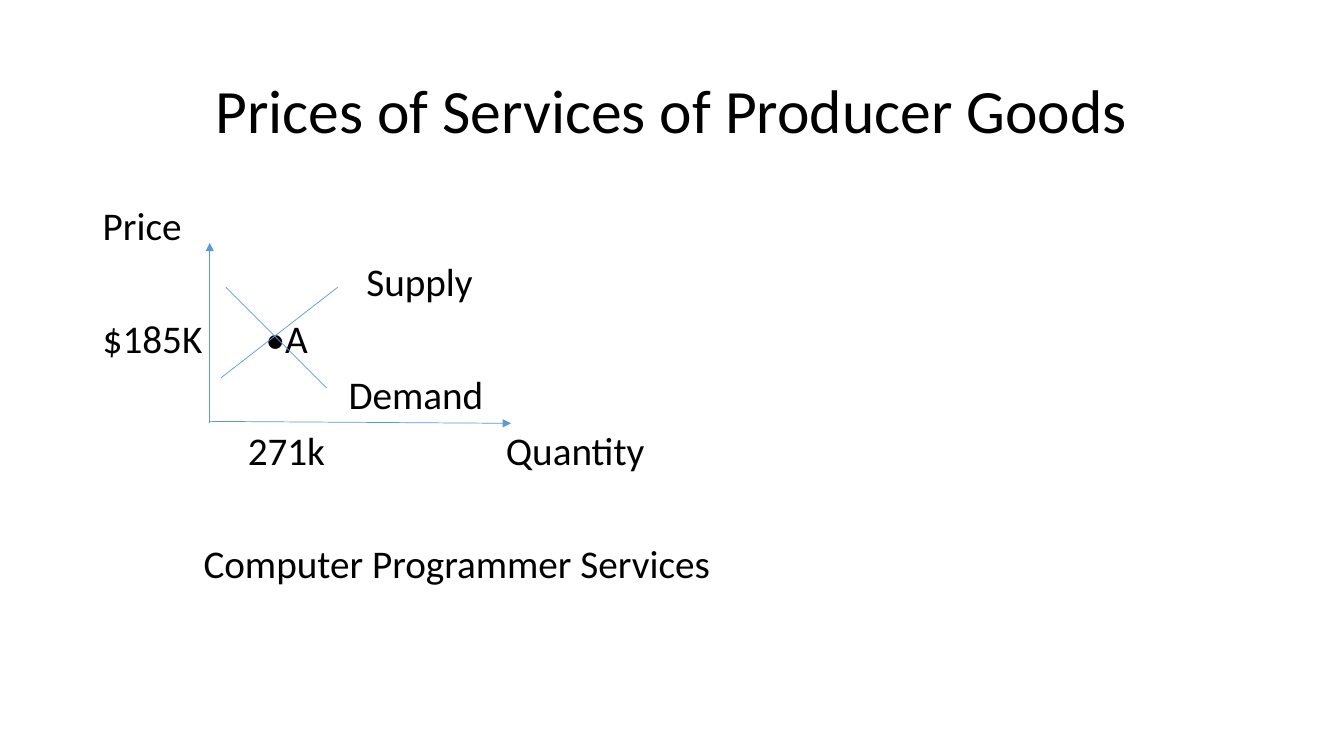
"""Build a slide showing supply and demand for computer programmer services."""
from dataclasses import dataclass

import pptx
import pptx.dml.color
import pptx.enum.shapes
import pptx.enum.text
import pptx.oxml
import pptx.oxml.ns
import pptx.presentation
import pptx.slide
import pptx.util
from lxml import etree

Pt = pptx.util.Pt
RGBColor = pptx.dml.color.RGBColor
PP_ALIGN = pptx.enum.text.PP_ALIGN
MSO_ANCHOR = pptx.enum.text.MSO_ANCHOR


@dataclass(frozen=True)
class Theme:
    font: str = "Calibri"
    text_color: RGBColor = RGBColor(0x00, 0x00, 0x00)
    line_color: RGBColor = RGBColor(0x5B, 0x9B, 0xD5)
    background: RGBColor = RGBColor(0xFF, 0xFF, 0xFF)
    title_size: float = 44
    label_size: float = 28
    line_width: float = 0.5
    line_spacing: float = 0.9


@dataclass(frozen=True)
class Label:
    text: str
    row: int
    left: float
    width: float


@dataclass(frozen=True)
class Line:
    start: tuple[float, float]
    end: tuple[float, float]
    arrow: bool = False


THEME = Theme()
ROW_TOP = 147.6
ROW_PITCH = 40.2
ROW_HEIGHT = 31

LABELS = [
    Label("Price", 0, 73.4, 64),
    Label("Supply", 1, 261.7, 86),
    Label("$185K", 2, 73.4, 74),
    Label("•A", 2, 189.7, 40),
    Label("Demand", 3, 249, 104),
    Label("271k", 4, 177, 64),
    Label("Quantity", 4, 361.4, 108),
    Label("Computer Programmer Services", 6, 145.4, 380),
]

PRICE_AXIS = Line((149.8, 302.4), (149.8, 173.5), arrow=True)
QUANTITY_AXIS = Line((149.8, 301), (365, 302.4), arrow=True)
SUPPLY_CURVE = Line((157.7, 270), (241.2, 205.2))
DEMAND_CURVE = Line((161.3, 205.2), (233.3, 277.2))


def add_text(slide: pptx.slide.Slide, text: str, *, left: float, top: float,
             width: float, height: float, size: float,
             align: PP_ALIGN = PP_ALIGN.LEFT,
             anchor: MSO_ANCHOR = MSO_ANCHOR.TOP) -> None:
    """Add one formatted line of text."""
    frame = slide.shapes.add_textbox(Pt(left), Pt(top), Pt(width), Pt(height)).text_frame
    frame.word_wrap = True
    frame.vertical_anchor = anchor
    frame.margin_left = frame.margin_right = frame.margin_top = frame.margin_bottom = 0
    paragraph = frame.paragraphs[0]
    paragraph.alignment = align
    paragraph.line_spacing = THEME.line_spacing
    run = paragraph.add_run()
    run.text = text
    run.font.name = THEME.font
    run.font.size = Pt(size)
    run.font.color.rgb = THEME.text_color


def add_label(slide: pptx.slide.Slide, label: Label) -> None:
    """Place a graph label on its text row."""
    add_text(slide, label.text, left=label.left, top=ROW_TOP + label.row * ROW_PITCH,
             width=label.width, height=ROW_HEIGHT, size=THEME.label_size)


def add_line(slide: pptx.slide.Slide, line: Line) -> None:
    """Draw an axis or a curve of the graph."""
    connector = slide.shapes.add_connector(
        pptx.enum.shapes.MSO_CONNECTOR.STRAIGHT,
        *(Pt(length) for length in (*line.start, *line.end)))
    connector.line.color.rgb = THEME.line_color
    connector.line.width = Pt(THEME.line_width)
    qn = pptx.oxml.ns.qn
    if line.arrow:
        etree.SubElement(connector.line._get_or_add_ln(), qn("a:tailEnd"), type="triangle")
    etree.SubElement(connector._element.spPr, qn("a:effectLst"))


def main() -> None:
    """Create the presentation and save it."""
    presentation = pptx.Presentation()
    presentation.slide_width = Pt(960)
    presentation.slide_height = Pt(540)
    slide = presentation.slides.add_slide(presentation.slide_layouts[6])
    slide.background.fill.solid()
    slide.background.fill.fore_color.rgb = THEME.background

    add_text(slide, "Prices of Services of Producer Goods", left=66, top=28.8,
             width=828, height=104.4, size=THEME.title_size,
             align=PP_ALIGN.CENTER, anchor=MSO_ANCHOR.MIDDLE)
    for label in LABELS:
        add_label(slide, label)
    for line in (PRICE_AXIS, QUANTITY_AXIS, SUPPLY_CURVE, DEMAND_CURVE):
        add_line(slide, line)
    presentation.save("out.pptx")


if __name__ == "__main__":
    main()
